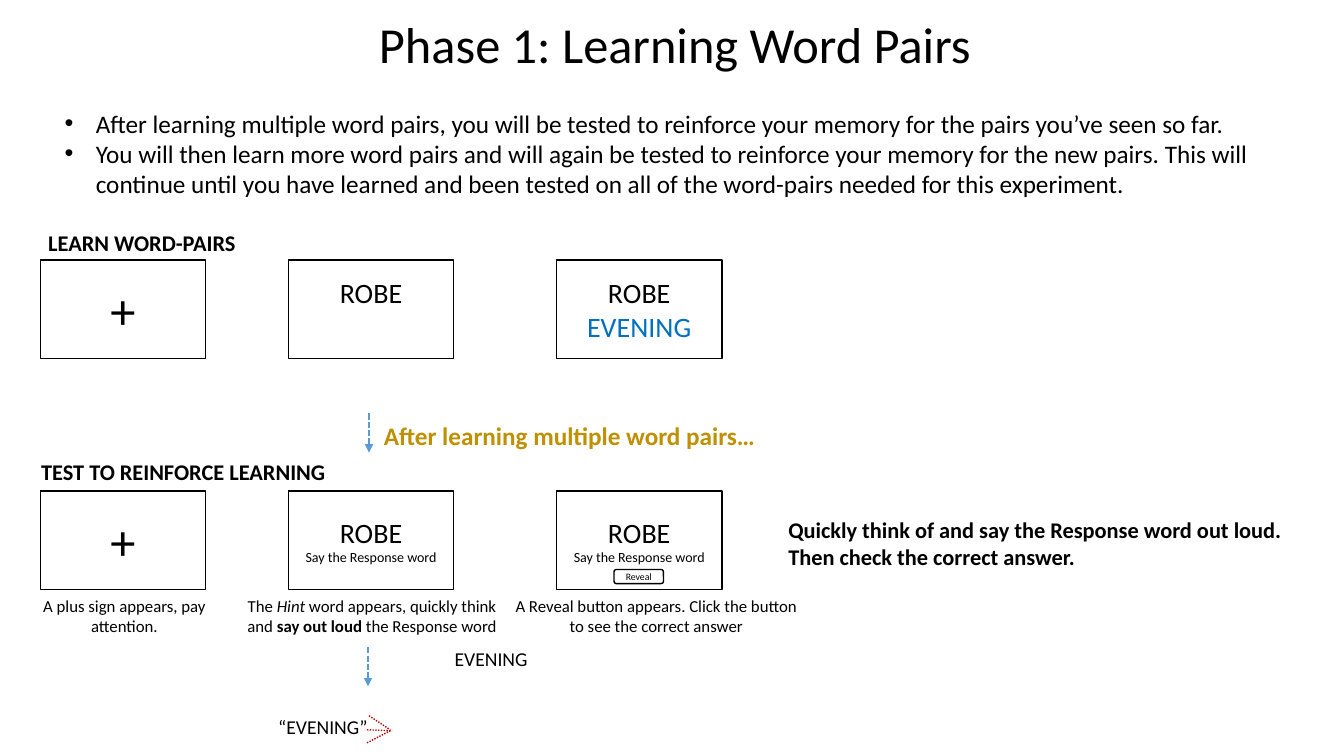
from lxml import etree
from pptx import Presentation
from pptx.dml.color import RGBColor
from pptx.enum.dml import MSO_LINE
from pptx.enum.shapes import MSO_CONNECTOR, MSO_SHAPE
from pptx.enum.text import MSO_ANCHOR as ANCHOR, MSO_AUTO_SIZE as FIT, PP_ALIGN as ALIGN
from pptx.oxml.ns import qn
from pptx.util import Inches, Pt

FONT = "Calibri"
BLACK, BLUE, GOLD, ARROW_BLUE, RED = "000000", "0070C0", "BF9000", "5B9BD5", "C00000"
CARD_LEFTS = (0.4, 2.86, 5.52)
CARD_SIZE = (1.64, 0.98)
PLUS = [[("+", {"size": 36})]]
WORD = [("ROBE", {"size": 20})]
PROMPT = [("Say the Response word", {"size": 10})]


def color(hex_value):
    return RGBColor.from_string(hex_value)


def place(shape, box):
    for name, value in zip(("left", "top", "width", "height"), box):
        setattr(shape, name, Inches(value))


def write(shape, paragraphs, align=ALIGN.LEFT, **common):
    """Fill a shape with paragraphs, each a list of (text, format) spans."""
    frame = shape.text_frame
    frame.word_wrap = True
    for index, spans in enumerate(paragraphs):
        para = frame.add_paragraph() if index else frame.paragraphs[0]
        para.alignment = align
        para.space_before = Pt(0)
        for text, extra in spans:
            span = para.add_run()
            span.text = text
            values = {"name": FONT, "size": 12, "color": BLACK, **common, **extra}
            span.font.color.rgb = color(values.pop("color"))
            values["size"] = Pt(values["size"])
            for name, value in values.items():
                setattr(span.font, name, value)


def add_label(page, box, text, **formats):
    """Add a text box; text is a string or a list of spans."""
    label = page.shapes.add_textbox(*map(Inches, box))
    spans = [(text, {})] if isinstance(text, str) else text
    write(label, [spans], **formats)


def add_outline(page, kind, box, paragraphs):
    outline = page.shapes.add_shape(kind, *map(Inches, box))
    outline.shadow.inherit = False
    outline.fill.background()
    outline.line.color.rgb = color(BLACK)
    outline.line.width = Pt(1)
    outline.text_frame.vertical_anchor = ANCHOR.MIDDLE
    write(outline, paragraphs, ALIGN.CENTER)
    return outline


def add_line(shapes, start, end, hex_value, width, dash, arrow=False):
    line = shapes.add_connector(MSO_CONNECTOR.STRAIGHT, *map(Inches, (*start, *end)))
    line.line.color.rgb = color(hex_value)
    line.line.width = Pt(width)
    line.line.dash_style = dash
    if arrow:
        etree.SubElement(line.line._get_or_add_ln(), qn("a:tailEnd"), type="triangle")
    etree.SubElement(line._element.spPr, qn("a:effectLst"))


def add_down_arrow(page, left, top):
    add_line(page.shapes, (left, top), (left, top + 0.39), ARROW_BLUE, 1.5,
             MSO_LINE.SQUARE_DOT, arrow=True)


def add_heading(page):
    title, body = page.placeholders
    place(title, (3.04, 0.08, 7.31, 0.71))
    place(body, (0.54, 1.02, 11.96, 1.01))
    for holder in (title, body):
        holder.text_frame.auto_size = FIT.NONE
    write(title, [[("Phase 1: Learning Word Pairs", {})]], ALIGN.CENTER, size=36)
    points = (
        "After learning multiple word pairs, you will be tested to reinforce your memory "
        "for the pairs you’ve seen so far.",
        "You will then learn more word pairs and will again be tested to reinforce your memory "
        "for the new pairs. This will continue until you have learned and been tested on all "
        "of the word-pairs needed for this experiment.",
    )
    write(body, [[(point, {})] for point in points], size=18)
    for para in body.text_frame.paragraphs:
        properties = para._p.get_or_add_pPr()
        properties.set("marL", str(Inches(0.31)))
        properties.set("indent", str(-Inches(0.31)))


def add_cards(page, top, contents):
    return [add_outline(page, MSO_SHAPE.RECTANGLE, (left, top, *CARD_SIZE), paragraphs)
            for left, paragraphs in zip(CARD_LEFTS, contents)]


def add_learning_row(page, top):
    add_label(page, (0.38, top - 0.36, 2.09, 0.37), "LEARN WORD-PAIRS", size=16, bold=True)
    answer = [("EVENING", {"size": 20, "color": BLUE})]
    hint_card = add_cards(page, top, (PLUS, [WORD], [WORD, answer]))[1]
    hint_card.text_frame.margin_bottom = Inches(0.38)


def add_transition(page, top):
    add_down_arrow(page, 3.66, top)
    add_label(page, (3.71, top + 0.02, 4.81, 0.4), "After learning multiple word pairs…",
              size=18, bold=True, color=GOLD)


def add_testing_row(page, top):
    add_label(page, (0.31, top - 0.37, 3.57, 0.37), "TEST TO REINFORCE LEARNING",
              size=16, bold=True)
    add_cards(page, top, (PLUS, [WORD, PROMPT], [WORD, PROMPT]))
    button = add_outline(page, MSO_SHAPE.ROUNDED_RECTANGLE, (6.09, top + 0.78, 0.49, 0.14),
                         [[("Reveal", {"size": 7})]])
    for side in ("left", "top", "right", "bottom"):
        setattr(button.text_frame, f"margin_{side}", 0)
    captions = (
        (0, 2.47, "A plus sign appears, pay attention."),
        (2.33, 2.72, [("The ", {}), ("Hint", {"italic": True}),
                      (" word appears, quickly think and ", {}),
                      ("say out loud", {"bold": True}), (" the Response word", {})]),
        (4.95, 3.12, "A Reveal button appears. Click the button to see the correct answer"),
    )
    for left, width, text in captions:
        add_label(page, (left, top + 0.99, width, 0.5), text, align=ALIGN.CENTER)
    add_label(page, (7.72, top + 0.2, 5.26, 0.64),
              "Quickly think of and say the Response word out loud. "
              "Then check the correct answer.", size=16, bold=True)


def add_spoken_answer(page, top):
    add_down_arrow(page, 3.65, top)
    add_label(page, (4.41, top - 0.05, 0.95, 0.34), "EVENING", size=14)
    add_label(page, (2.66, top + 0.62, 1.22, 0.34), "“EVENING”", size=14)
    voice = page.shapes.add_group_shape()
    rays = (((3.66, 0.68), (3.87, 0.82)),
            ((3.64, 0.82), (3.89, 0.83)),
            ((3.64, 0.95), (3.87, 0.83)))
    for ray in rays:
        start, end = ((left, top + drop) for left, drop in ray)
        add_line(voice.shapes, start, end, RED, 1, MSO_LINE.ROUND_DOT)


def main():
    deck = Presentation()
    deck.slide_width, deck.slide_height = Inches(13.33), Inches(7.5)
    page = deck.slides.add_slide(deck.slide_layouts[1])
    add_heading(page)
    add_learning_row(page, 2.58)
    add_transition(page, 4.1)
    add_testing_row(page, 4.87)
    add_spoken_answer(page, 6.42)
    deck.save("out.pptx")


if __name__ == "__main__":
    main()
